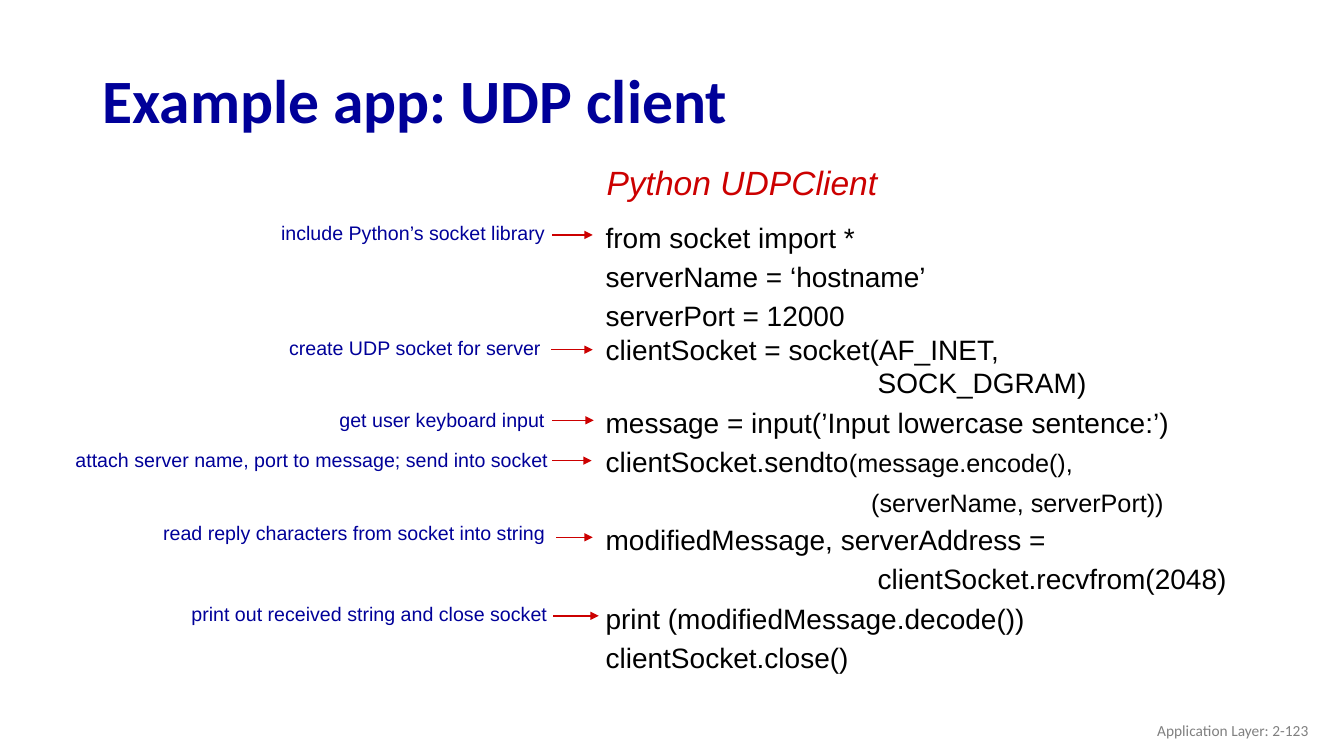
from lxml import etree
from pptx import Presentation
from pptx.dml.color import RGBColor
from pptx.enum.shapes import MSO_CONNECTOR
from pptx.enum.text import MSO_ANCHOR, PP_ALIGN
from pptx.oxml.ns import qn
from pptx.util import Pt

STRAIGHT = MSO_CONNECTOR.STRAIGHT
MIDDLE, TOP = MSO_ANCHOR.MIDDLE, MSO_ANCHOR.TOP
LEFT, RIGHT = PP_ALIGN.LEFT, PP_ALIGN.RIGHT
BLUE, RED, BLACK, GRAY = "000099", "CC0000", "000000", "808080"


def rgb(value):
    return RGBColor.from_string(value)


def put_text(sp, lines, font="Arial", color=BLACK, bold=False, italic=False,
             align=LEFT, anchor=TOP):
    """Each line is (line spacing in points or None, [(text, size), ...])."""
    tf = sp.text_frame
    tf.word_wrap = True
    tf.vertical_anchor = anchor
    for i, (spacing, runs) in enumerate(lines):
        p = tf.paragraphs[0] if i == 0 else tf.add_paragraph()
        p.alignment = align
        if spacing:
            p.line_spacing = Pt(spacing)
        for text, size in runs:
            r = p.add_run()
            r.text = text
            r.font.name, r.font.size = font, Pt(size)
            r.font.bold, r.font.italic = bold, italic
            r.font.color.rgb = rgb(color)


prs = Presentation()
prs.slide_width, prs.slide_height = Pt(960), Pt(540)
s = prs.slides.add_slide(prs.slide_layouts[5])

# Title
sp = s.shapes.title
sp.left, sp.top, sp.width, sp.height = Pt(66), Pt(35.5), Pt(828), Pt(70.5)
put_text(sp, [(None, [("Example app: UDP client", 44)])],
         font="Calibri", color=BLUE, bold=True, anchor=MIDDLE)

# Code listing
code = [
    (28, [("from socket import *", 20)]),
    (28, [("serverName = ‘hostname’", 20)]),
    (28, [("serverPort = 12000", 20)]),
    (24, [("clientSocket = socket(AF_INET,", 20)]),
    (24, [("                                   SOCK_DGRAM)", 20)]),
    (28, [("message = input(’Input lowercase sentence:’)", 20)]),
    (28, [("clientSocket.sendto", 20), ("(message.encode(),", 18)]),
    (28, [("                                      (serverName, serverPort))", 18)]),
    (28, [("modifiedMessage, serverAddress =", 20)]),
    (28, [("                                   clientSocket.recvfrom(2048)", 20)]),
    (28, [("print (modifiedMessage.decode())", 20)]),
    (28, [("clientSocket.close()", 20)]),
]
sp = s.shapes.add_textbox(Pt(425.5), Pt(149.8), Pt(460), Pt(338.4))
put_text(sp, code)

# Code heading
sp = s.shapes.add_textbox(Pt(426.2), Pt(112.3), Pt(216), Pt(36.7))
put_text(sp, [(None, [("Python UDPClient", 24)])], color=RED, italic=True)

# Explanations: text, left, top, width, line spacing, arrow start, end, y
notes = [
    ("include Python’s socket library", 193.7, 154.8, 238, 16, 394.6, 423.4, 167.8),
    ("create UDP socket for server", 199.4, 236.2, 232, None, 393.8, 423.4, 249.8),
    ("get user keyboard input", 235.4, 288.7, 232, 16, 394.6, 424.1, 300.2),
    ("attach server name, port to message; send into socket",
     46.8, 316.1, 371.5, None, 394.6, 422.6, 329),
    ("read reply characters from socket into string",
     109.4, 368.6, 322, None, 397.4, 423.4, 383.8),
    ("print out received string and close socket",
     129.6, 426.2, 290, None, 395.3, 427.7, 439.9),
]
for text, left, top, width, spacing, start, end, y in notes:
    sp = s.shapes.add_textbox(Pt(left), Pt(top), Pt(width), Pt(24))
    put_text(sp, [(spacing, [(text, 14)])], color=BLUE)
    arrow = s.shapes.add_connector(STRAIGHT, Pt(start), Pt(y), Pt(end), Pt(y))
    arrow.line.color.rgb = rgb(RED)
    arrow.line.width = Pt(1)
    etree.SubElement(arrow.line._get_or_add_ln(), qn("a:tailEnd"), type="triangle")
    etree.SubElement(arrow._element.spPr, qn("a:effectLst"))

# Footer
sp = s.shapes.add_textbox(Pt(725.8), Pt(507.6), Pt(216), Pt(28.8))
put_text(sp, [(None, [("Application Layer: 2-123", 11)])],
         font="Calibri", color=GRAY, align=RIGHT, anchor=MIDDLE)

prs.save("out.pptx")
